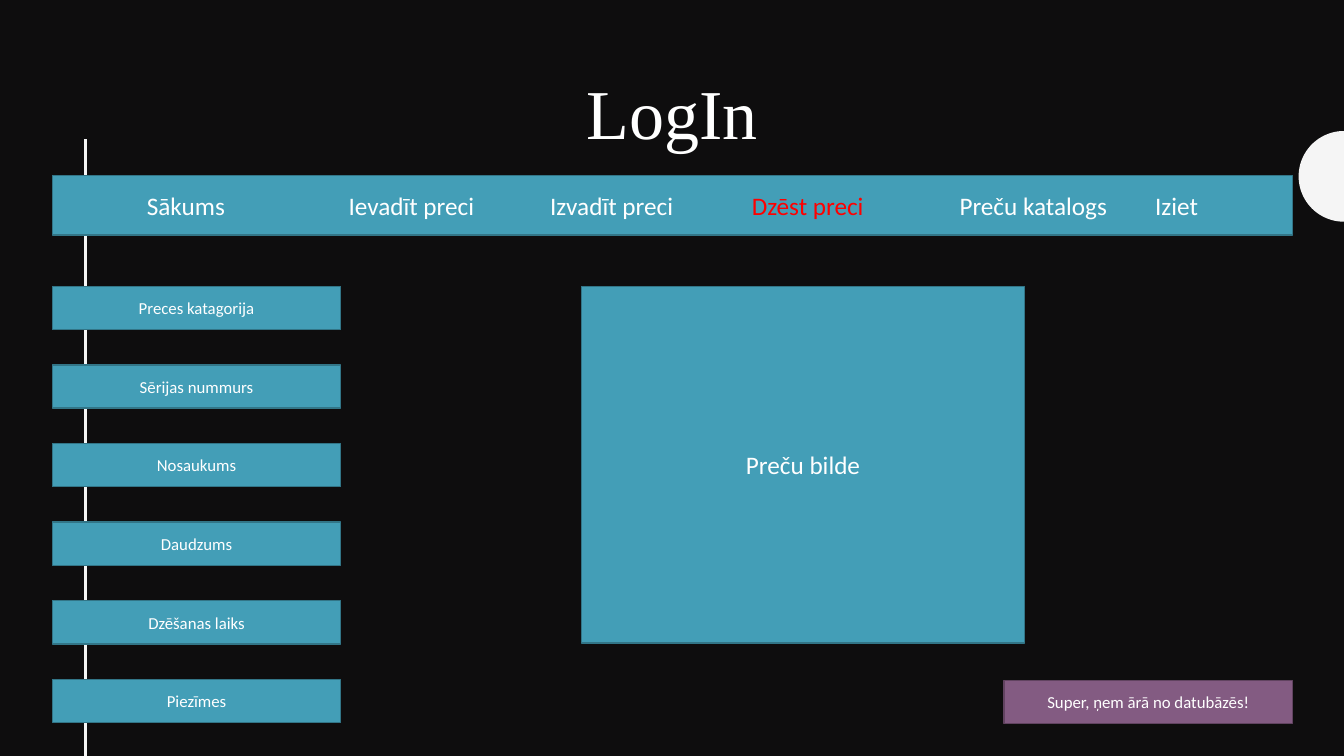
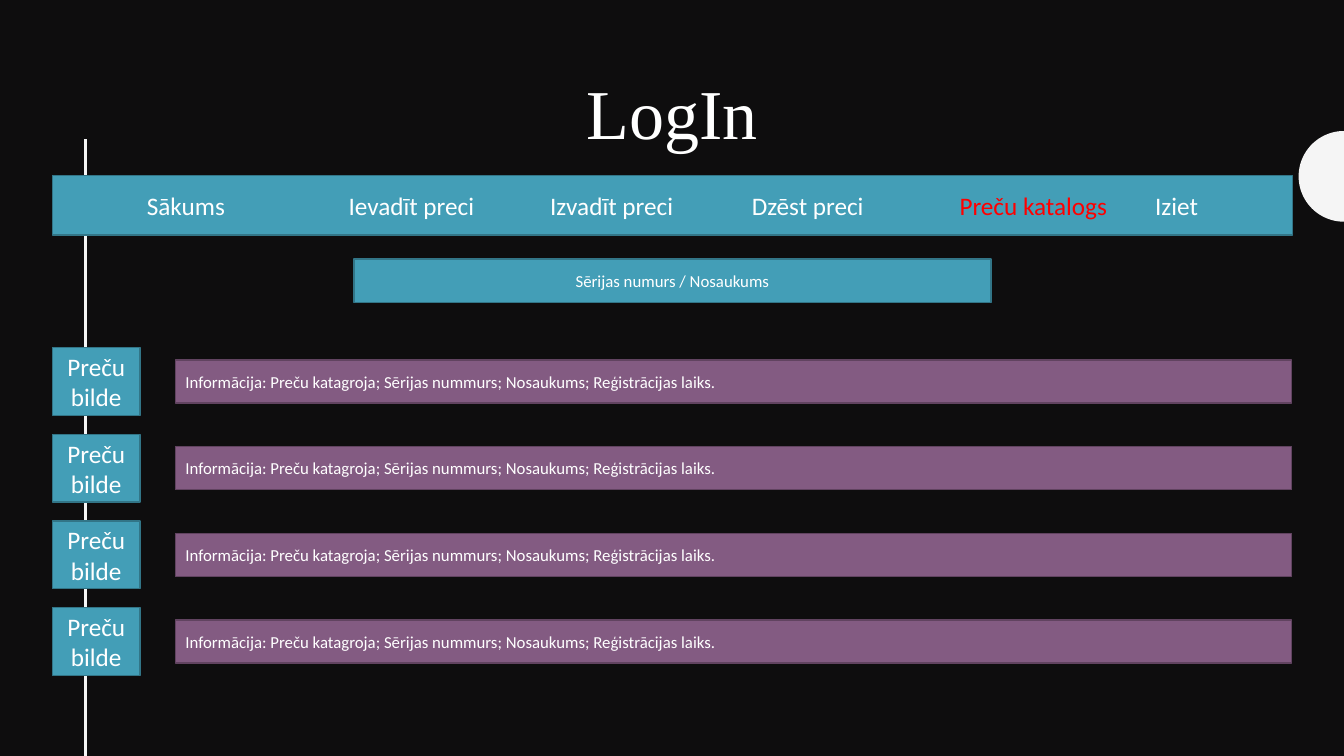
"""Build two wireframe slides of a stock database screen."""
from dataclasses import dataclass
from math import cos, pi, sin

from lxml.etree import SubElement
from pptx import Presentation
from pptx.dml.color import RGBColor
from pptx.enum.shapes import MSO_CONNECTOR as Connector, MSO_SHAPE as Preset
from pptx.enum.text import MSO_ANCHOR as Anchor, MSO_AUTO_SIZE as AutoSize, PP_ALIGN as Align
from pptx.oxml.ns import qn
from pptx.slide import Slide
from pptx.util import Inches, Pt

COLORS = {
    "background": "0E0D0E",
    "ornament": "F5F5F5",
    "text": "FFFFFF",
    "active": "FF0000",
    "teal": "439EB7",
    "teal_edge": "327587",
    "purple": "835B82",
    "purple_edge": "614360",
}
BODY_FONT, TITLE_FONT = "Calibri", "Times New Roman"
WIDTH, HEIGHT = 13.33, 7.5
LEFT, BOX_HEIGHT, FIELD_WIDTH = 0.52, 0.43, 2.86

MENU = ("Sākums", "Ievadīt preci", "Izvadīt preci", "Dzēst preci", "Preču katalogs", "Iziet")
MENU_STOPS = (2, 4, 6, 8.06, 10)
FIELDS = ("Preces katagorija", "Sērijas nummurs", "Nosaukums", "Daudzums", "Dzēšanas laiks", "Piezīmes")
PRODUCT_INFO = "Informācija: Preču katagroja; Sērijas nummurs; Nosaukums; Reģistrācijas laiks."
PRODUCT_IMAGE = "Preču bilde"
PRODUCT_COUNT = 4


@dataclass(frozen=True)
class Box:
    left: float
    top: float
    width: float
    height: float = BOX_HEIGHT
    label: str = ""
    size: int = 12
    color: str = "teal"
    align: Align = Align.CENTER


def rgb(name: str) -> RGBColor:
    return RGBColor.from_string(COLORS[name])


def add_run(paragraph, text: str, size: int, color: str = "text", font: str = BODY_FONT) -> None:
    run = paragraph.add_run()
    run.text = text
    for attribute, value in {"name": font, "size": Pt(size)}.items():
        setattr(run.font, attribute, value)
    run.font.color.rgb = rgb(color)


def draw_box(slide: Slide, box: Box):
    edges = map(Inches, (box.left, box.top, box.width, box.height))
    shape = slide.shapes.add_shape(Preset.RECTANGLE, *edges)
    shape.shadow.inherit = False
    shape.fill.solid()
    shape.fill.fore_color.rgb = rgb(box.color)
    shape.line.color.rgb = rgb(f"{box.color}_edge")
    shape.line.width = Pt(1)
    shape.text_frame.vertical_anchor = Anchor.MIDDLE
    paragraph = shape.text_frame.paragraphs[0]
    paragraph.alignment = box.align
    if box.label:
        add_run(paragraph, box.label, box.size)
    return shape


def draw_ornaments(slide: Slide) -> None:
    radius, middle, steps = 0.45, 1.75, 48
    angles = [pi * step / steps for step in range(steps + 1)]
    arc = [(Inches(WIDTH - radius * sin(a)), Inches(middle - radius * cos(a))) for a in angles]
    builder = slide.shapes.build_freeform(*arc[0])
    builder.add_line_segments(arc[1:], close=True)
    half_disc = builder.convert_to_shape()
    half_disc.shadow.inherit = False
    half_disc.fill.solid()
    half_disc.fill.fore_color.rgb = rgb("ornament")
    half_disc.line.fill.background()

    ends = map(Inches, (0.85, 1.38, 0.85, HEIGHT))
    rail = slide.shapes.add_connector(Connector.STRAIGHT, *ends)
    rail.line.color.rgb = rgb("ornament")
    rail.line.width = Pt(2)
    SubElement(rail.line._get_or_add_ln().getparent(), qn("a:effectLst"))


def draw_title(slide: Slide, text: str) -> None:
    title = slide.shapes.title
    place = {"left": 0, "top": 0.64, "width": WIDTH, "height": 0.94}
    for attribute, value in place.items():
        setattr(title, attribute, Inches(value))
    frame_format = {
        "word_wrap": True,
        "auto_size": AutoSize.SHAPE_TO_FIT_TEXT,
        "vertical_anchor": Anchor.TOP,
    }
    for attribute, value in frame_format.items():
        setattr(title.text_frame, attribute, value)
    paragraph = title.text_frame.paragraphs[0]
    paragraph.alignment = Align.CENTER
    add_run(paragraph, text, 50, font=TITLE_FONT)


def draw_menu(slide: Slide, active: str) -> None:
    bar = draw_box(slide, Box(LEFT, 1.74, 12.3, 0.59))
    paragraph = bar.text_frame.paragraphs[0]
    stops = SubElement(paragraph._p.get_or_add_pPr(), qn("a:tabLst"))
    for stop in MENU_STOPS:
        SubElement(stops, qn("a:tab"), pos=str(Inches(stop)), algn="l")
    for index, item in enumerate(MENU):
        lead = "\t" if index else ""
        add_run(paragraph, lead + item, 18, "active" if item == active else "text")


def add_screen(prs, active: str) -> Slide:
    slide = prs.slides.add_slide(prs.slide_layouts[5])
    draw_ornaments(slide)
    draw_title(slide, "LogIn")
    draw_menu(slide, active)
    return slide


def build_delete_screen(prs) -> None:
    slide = add_screen(prs, "Dzēst preci")
    for row, field in enumerate(FIELDS):
        draw_box(slide, Box(LEFT, 2.84 + 0.78 * row, FIELD_WIDTH, label=field))
    draw_box(slide, Box(5.77, 2.84, 4.39, 3.54, PRODUCT_IMAGE, 18))
    draw_box(slide, Box(9.96, 6.75, FIELD_WIDTH, label="Super, ņem ārā no datubāzēs!", color="purple"))


def build_catalogue_screen(prs) -> None:
    slide = add_screen(prs, "Preču katalogs")
    draw_box(slide, Box(3.51, 2.57, 6.32, label="Sērijas numurs / Nosaukums"))
    for row in range(PRODUCT_COUNT):
        top = 3.45 + 0.86 * row
        draw_box(slide, Box(LEFT, top, 0.87, 0.67, PRODUCT_IMAGE, 18))
        draw_box(slide, Box(1.74, top + 0.12, 11.07, label=PRODUCT_INFO, color="purple", align=Align.LEFT))


def main() -> None:
    prs = Presentation()
    prs.slide_width, prs.slide_height = Inches(WIDTH), Inches(HEIGHT)
    backdrop = prs.slide_master.background.fill
    backdrop.solid()
    backdrop.fore_color.rgb = rgb("background")
    build_delete_screen(prs)
    build_catalogue_screen(prs)
    prs.save("out.pptx")


if __name__ == "__main__":
    main()
